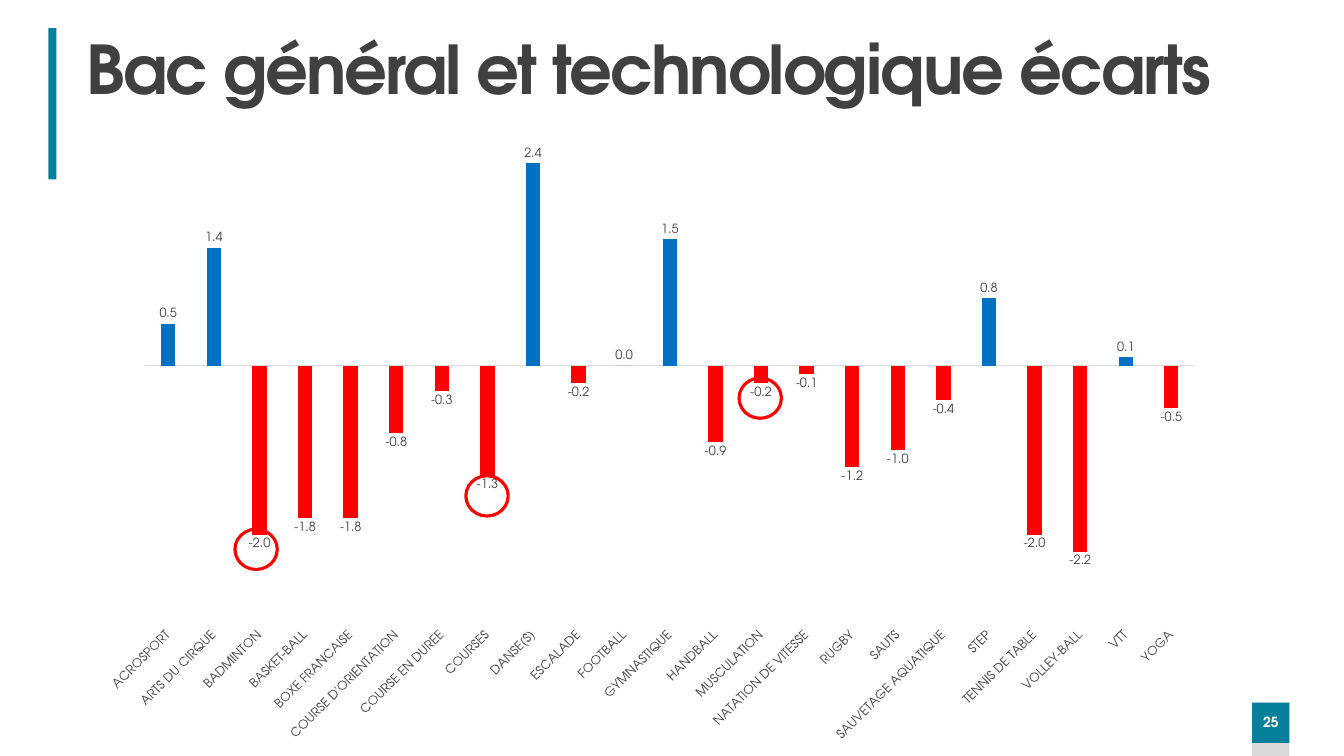
import pptx
import pptx.chart.data
import pptx.dml.color
import pptx.enum.chart
import pptx.enum.shapes
import pptx.enum.text
import pptx.oxml
import pptx.oxml.ns
import pptx.util
from dataclasses import dataclass

Inches = pptx.util.Inches
Pt = pptx.util.Pt
SHAPE = pptx.enum.shapes.MSO_SHAPE


@dataclass(frozen=True)
class Theme:
    font: str = "TeX Gyre Adventor"
    teal: str = "067F9C"
    grey: str = "D9D9D9"
    dark: str = "404040"
    axis_text: str = "595959"
    black: str = "000000"
    white: str = "FFFFFF"
    gain: str = "0070C0"
    loss: str = "FF0000"
    title_size: int = 48
    base_size: int = 10
    label_size: int = 9


def rgb(color):
    return pptx.dml.color.RGBColor.from_string(color)


class SlideBuilder:
    def __init__(self, slide, theme):
        self.slide = slide
        self.theme = theme

    def style(self, font, size, color, bold=False):
        font.name = self.theme.font
        font.size = Pt(size)
        font.bold = bold
        font.color.rgb = rgb(color)

    def shape(self, kind, box, fill=None, line=None):
        sp = self.slide.shapes.add_shape(kind, *map(Inches, box))
        sp.shadow.inherit = False
        if fill:
            sp.fill.solid()
            sp.fill.fore_color.rgb = rgb(fill)
        else:
            sp.fill.background()
        if line:
            sp.line.color.rgb = rgb(line)
            sp.line.width = Pt(2.25)
        else:
            sp.line.fill.background()
        return sp

    def label(self, sp, text, size, color, align):
        tf = sp.text_frame
        tf.word_wrap = True
        tf.vertical_anchor = pptx.enum.text.MSO_ANCHOR.MIDDLE
        tf.text = text
        p = tf.paragraphs[0]
        p.alignment = align
        p.line_spacing = 0.9
        r = p.runs[0]
        self.style(r.font, size, color, bold=True)
        return r

    def title(self, text, box):
        sp = self.slide.shapes.add_textbox(*map(Inches, box))
        r = self.label(sp, text, self.theme.title_size, self.theme.dark,
                       pptx.enum.text.PP_ALIGN.LEFT)
        r.font._element.set("spc", "-150")

    def page_number(self, text, box):
        sp = self.shape(SHAPE.RECTANGLE, box, fill=self.theme.teal)
        sp.text_frame.margin_left = sp.text_frame.margin_right = 0
        self.label(sp, text, self.theme.base_size, self.theme.white,
                   pptx.enum.text.PP_ALIGN.CENTER)

    def column_chart(self, gaps, box, layout):
        theme = self.theme
        data = pptx.chart.data.CategoryChartData(number_format="0.0")
        data.categories = list(gaps)
        data.add_series("Series 1", list(gaps.values()))
        chart = self.slide.shapes.add_chart(
            pptx.enum.chart.XL_CHART_TYPE.COLUMN_CLUSTERED,
            *map(Inches, box), data).chart
        chart.has_legend = False
        chart.has_title = False
        self.style(chart.font, theme.base_size, theme.black)

        # Columns: gains in blue, losses in red
        plot = chart.plots[0]
        plot.vary_by_categories = False
        plot.gap_width = 219
        plot.overlap = -27
        series = plot.series[0]
        series.invert_if_negative = False
        series.format.fill.solid()
        series.format.fill.fore_color.rgb = rgb(theme.loss)
        for i, gap in enumerate(gaps.values()):
            if gap > 0:
                fill = series.points[i].format.fill
                fill.solid()
                fill.fore_color.rgb = rgb(theme.gain)

        # Value labels
        labels = series.data_labels
        labels.show_value = True
        labels.position = pptx.enum.chart.XL_LABEL_POSITION.OUTSIDE_END
        labels.number_format = "0.0"
        labels.number_format_is_linked = False
        self.style(labels.font, theme.label_size, theme.dark)

        # Axes
        values = chart.value_axis
        values.minimum_scale, values.maximum_scale = -3, 3
        values.has_major_gridlines = False
        values.visible = False
        cats = chart.category_axis
        cats.tick_label_position = pptx.enum.chart.XL_TICK_LABEL_POSITION.LOW
        cats.major_tick_mark = pptx.enum.chart.XL_TICK_MARK.NONE
        cats.format.line.color.rgb = rgb(theme.grey)
        cats.format.line.width = Pt(0.75)
        self.style(cats.tick_labels.font, theme.label_size, theme.axis_text)
        body = cats._element.find(".//" + pptx.oxml.ns.qn("a:bodyPr"))
        body.set("rot", "-2700000")
        body.set("vert", "horz")

        # Fixed inner plot area
        area = chart._chartSpace.chart.plotArea
        for old in area.findall(pptx.oxml.ns.qn("c:layout")):
            area.remove(old)
        modes = "".join(f'<c:{m}Mode val="edge"/>' for m in "xy")
        sizes = "".join(f'<c:{n} val="{v}"/>' for n, v in zip("xywh", layout))
        area.insert(0, pptx.oxml.parse_xml(
            f'<c:layout {pptx.oxml.ns.nsdecls("c")}><c:manualLayout>'
            f'<c:layoutTarget val="inner"/>{modes}{sizes}'
            '</c:manualLayout></c:layout>'))


GAPS = {
    "ACROSPORT": 0.5, "ARTS DU CIRQUE": 1.4, "BADMINTON": -2.0,
    "BASKET-BALL": -1.8, "BOXE FRANCAISE": -1.8,
    "COURSE D'ORIENTATION": -0.8, "COURSE EN DUREE": -0.3,
    "COURSES": -1.3, "DANSE(S)": 2.4, "ESCALADE": -0.2, "FOOTBALL": 0.0,
    "GYMNASTIQUE": 1.5, "HANDBALL": -0.9, "MUSCULATION": -0.2,
    "NATATION DE VITESSE": -0.1, "RUGBY": -1.2, "SAUTS": -1.0,
    "SAUVETAGE AQUATIQUE": -0.4, "STEP": 0.8, "TENNIS DE TABLE": -2.0,
    "VOLLEY-BALL": -2.2, "VTT": 0.1, "YOGA": -0.5,
}


def main():
    prs = pptx.Presentation()
    prs.slide_width, prs.slide_height = Inches(13.33), Inches(7.5)
    theme = Theme()
    page = SlideBuilder(prs.slides.add_slide(prs.slide_layouts[6]), theme)

    # Frame: accent bar and page number
    page.shape(SHAPE.RECTANGLE, (0.48, 0.28, 0.08, 1.5), fill=theme.teal)
    page.shape(SHAPE.RECTANGLE, (12.42, 6.97, 0.37, 0.53), fill=theme.grey)
    page.page_number("25", (12.42, 6.97, 0.37, 0.4))

    # Title and chart
    page.title("Bac général et technologique écarts", (0.76, 0.31, 12.24, 0.82))
    page.column_chart(GAPS, (0.97, 1.12, 11.82, 6.23), (0.04, 0, 0.88, 0.81))

    # Circles around the highlighted gaps
    for left, top in ((2.33, 5.25), (4.62, 4.72), (7.33, 3.75)):
        page.shape(SHAPE.OVAL, (left, top, 0.42, 0.4), line=theme.loss)

    prs.save("out.pptx")


if __name__ == "__main__":
    main()
